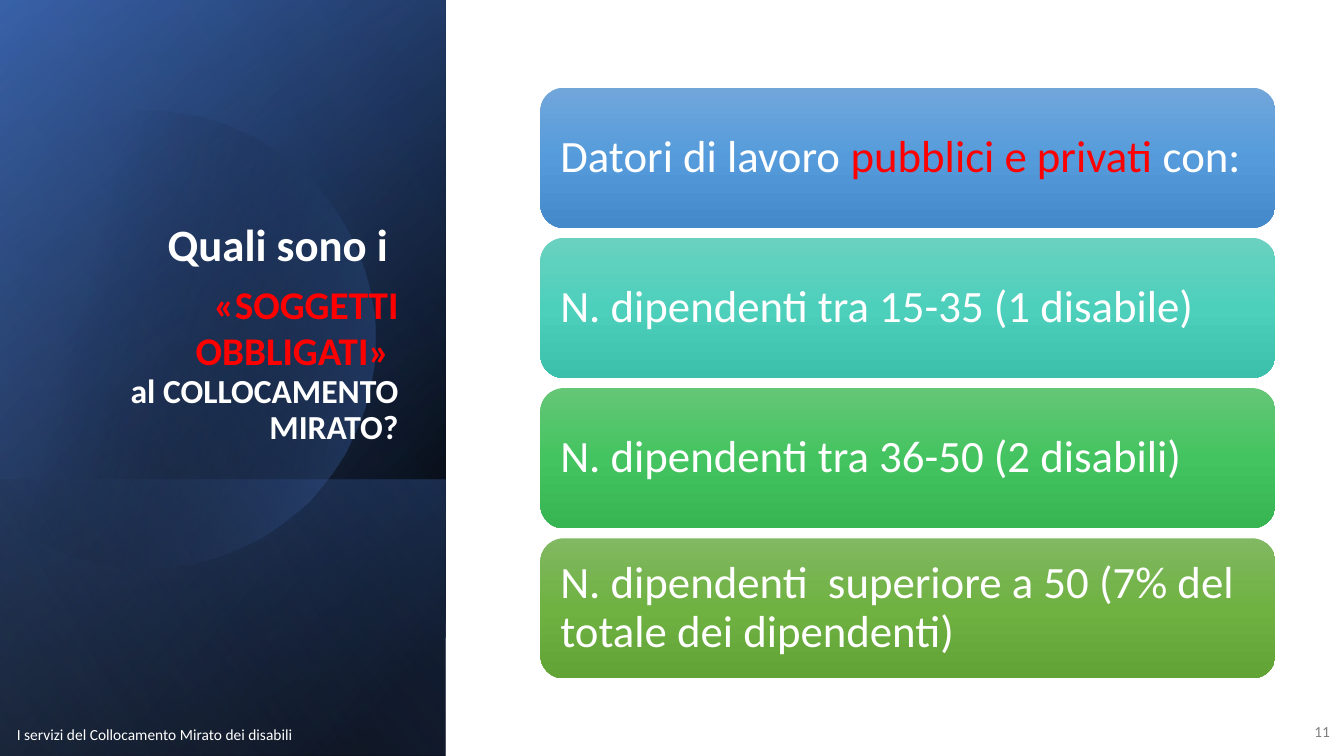
from math import cos, radians, sin

from pptx import Presentation
from pptx.dml.color import RGBColor
from pptx.enum.shapes import MSO_SHAPE
from pptx.enum.text import MSO_ANCHOR, PP_ALIGN
from pptx.oxml import parse_xml
from pptx.oxml.ns import nsdecls
from pptx.util import Emu, Pt

PX = 9144  # 100 px to the inch
INK = {"white": "FFFFFF", "red": "FF0000", "grey": "808080", "black": "000000",
       "navy": "2F5597", "blue": "4472C4", "pale": "8FAADC"}


def write(para, text, size=32, color="white", bold=False, font="Calibri"):
    """Add text to a paragraph; each newline becomes a line break."""
    for i, line in enumerate(text.split("\n")):
        if i:
            para.add_line_break()
        if line:
            run = para.add_run()
            run.text = line
            run.font.name, run.font.size, run.font.bold = font, Pt(size), bold
            run.font.color.rgb = RGBColor.from_string(INK[color])


class Deck:
    def __init__(self, wide, high):
        self.prs = Presentation()
        self.prs.slide_width, self.prs.slide_height = Emu(wide * PX), Emu(high * PX)
        self.slide = self.prs.slides.add_slide(self.prs.slide_layouts[6])
        self.shapes = self.slide.shapes

    def paint(self, shape, stops, angle):
        """Fill with (position, hex, opacity) stops, all in percent."""
        shape.shadow.inherit = False
        shape.line.fill.background()
        shape.fill.background()
        marks = "".join(
            f'<a:gs pos="{pos * 1000}"><a:srgbClr val="{tint}">'
            f'<a:alpha val="{alpha * 1000}"/></a:srgbClr></a:gs>'
            for pos, tint, alpha in stops)
        grad = parse_xml(
            f'<a:gradFill rotWithShape="1" {nsdecls("a")}><a:gsLst>{marks}</a:gsLst>'
            f'<a:lin ang="{angle * 60000}" scaled="0"/></a:gradFill>')
        props = shape._element.spPr
        props.replace(props.find("{*}noFill"), grad)

    def block(self, box, stops, angle, kind=MSO_SHAPE.RECTANGLE):
        shape = self.shapes.add_shape(kind, *[Emu(v * PX) for v in box])
        self.paint(shape, stops, angle)
        return shape

    def disc(self, x, y, radius, sweep, stops, angle):
        """Circle cut off by a straight left edge."""
        dots = [(round(x + radius * cos(radians(t))), round(y + radius * sin(radians(t))))
                for t in range(-sweep, sweep + 1, 3)]
        form = self.shapes.build_freeform(*dots[0], scale=PX)
        form.add_line_segments(dots[1:], close=True)
        self.paint(form.convert_to_shape(), stops, angle)

    def fit(self, shape, runs, align, anchor=MSO_ANCHOR.MIDDLE, inset=(10, 5), space=1.0):
        frame = shape.text_frame
        frame.word_wrap, frame.vertical_anchor = True, anchor
        frame.margin_left = frame.margin_right = Emu(inset[0] * PX)
        frame.margin_top = frame.margin_bottom = Emu(inset[1] * PX)
        para = frame.paragraphs[0]
        para.alignment, para.line_spacing = align, space
        for text, style in runs:
            write(para, text, **style)

    def label(self, box, runs, align, **style):
        shape = self.shapes.add_textbox(*[Emu(v * PX) for v in box])
        self.fit(shape, runs, align, **style)

    def card(self, box, tints, runs):
        stops = [(50 * i, tint, 100) for i, tint in enumerate(tints)]
        shape = self.block(box, stops, 90, MSO_SHAPE.ROUNDED_RECTANGLE)
        self.fit(shape, runs, PP_ALIGN.LEFT, inset=(13, 13), space=0.9)


def main():
    deck = Deck(1333, 750)
    black, blue = INK["black"], INK["blue"]

    # Dark side panel
    side, foot = (0, 0, 442, 750), (0, 476, 442, 274)
    deck.block(side, [(8, black, 100), (100, INK["navy"], 100)], 220)
    deck.block(side, [(0, black, 0), (99, blue, 46)], 240)
    deck.block(foot, [(2, blue, 29), (100, black, 30)], 140)
    deck.disc(145, 337, 227, 135, [(29, black, 0), (100, blue, 43)], 14)
    deck.block(side, [(0, black, 0), (99, INK["pale"], 11)], 150)

    # Title
    deck.label((5, 186, 400, 262), [
        ("Quali sono i \n", dict(bold=True)),
        (" ", dict(size=40, bold=True)),
        ("«SOGGETTI OBBLIGATI» \n", dict(size=28, color="red", bold=True)),
        ("al COLLOCAMENTO MIRATO?", dict(size=24, bold=True)),
    ], PP_ALIGN.RIGHT, anchor=MSO_ANCHOR.BOTTOM, space=0.9)

    # Footer and page number
    deck.label((5, 694, 297, 69),
               [("I servizi del Collocamento Mirato dei disabili", dict(size=11))],
               PP_ALIGN.CENTER)
    deck.label((1280, 706, 49, 40), [("11", dict(size=11, color="grey"))], PP_ALIGN.RIGHT)

    # Cards
    cards = [
        (("71A6DB", "559BDB", "448ACA"),
         [("Datori di lavoro ", {}), ("pubblici e privati ", dict(color="red")), ("con:", {})]),
        (("6AD1C0", "4CD0BC", "3CC0AC"), [("N. dipendenti tra 15-35 (1 disabile)", {})]),
        (("64C677", "44C460", "36B552"), [("N. dipendenti tra 36-50 (2 disabili)", {})]),
        (("81B861", "6FB242", "62A336"),
         [("N. dipendenti  superiore a 50 (7% del totale dei dipendenti)", {})]),
    ]
    for i, (tints, runs) in enumerate(cards):
        deck.card((536, 87 + 149 * i, 729, 139), tints, runs)

    deck.prs.save("out.pptx")


if __name__ == "__main__":
    main()
